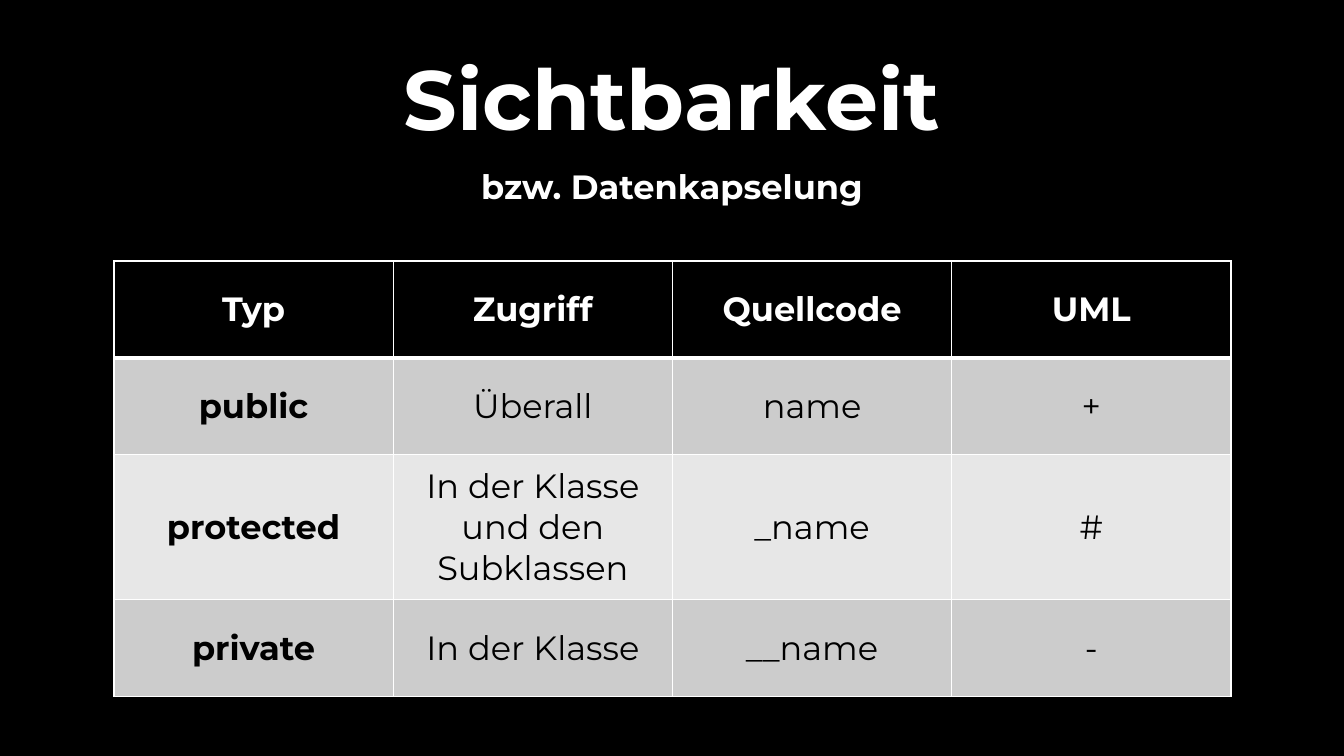
from dataclasses import dataclass

from lxml.etree import SubElement
from pptx import Presentation
from pptx.dml.color import RGBColor
from pptx.enum.text import MSO_ANCHOR, MSO_AUTO_SIZE, PP_ALIGN
from pptx.oxml.ns import qn
from pptx.util import Inches, Pt

FONT = "Montserrat"
BLACK, WHITE = "000000", "FFFFFF"
DARK_BAND, LIGHT_BAND = "CCCCCC", "E7E7E7"


@dataclass
class Row:
    cells: tuple[str, str, str, str]
    height: float
    fill: str
    color: str = BLACK
    header: bool = False
    top: float = 1
    bottom: float = 1


@dataclass
class Heading:
    text: str
    top: float
    height: float
    size: float


TITLE = Heading("Sichtbarkeit", 0.31, 1.42, 60)
SUBTITLE = Heading("bzw. Datenkapselung", 1.57, 0.61, 24)
ROWS = [
    Row(("Typ", "Zugriff", "Quellcode", "UML"), 0.96, BLACK, WHITE, header=True, bottom=3),
    Row(("public", "Überall", "name", "+"), 0.96, DARK_BAND, top=3),
    Row(("protected", "In der Klasse und den Subklassen", "_name", "#"), 1.44, LIGHT_BAND),
    Row(("private", "In der Klasse", "__name", "-"), 0.96, DARK_BAND),
]
COLUMN_WIDTH = 2.77


def rgb(color: str) -> RGBColor:
    return RGBColor.from_string(color)


def format_text(tf, size: float, color: str, bold: bool) -> None:
    p = tf.paragraphs[0]
    p.alignment = PP_ALIGN.CENTER
    font = p.runs[0].font
    font.name, font.size, font.bold = FONT, Pt(size), bold
    font.color.rgb = rgb(color)


def add_heading(sp, heading: Heading) -> None:
    sp.left, sp.top = Inches(0.15), Inches(heading.top)
    sp.width, sp.height = Inches(13.03), Inches(heading.height)
    tf = sp.text_frame
    tf.text = heading.text
    tf.word_wrap = True
    tf.auto_size = MSO_AUTO_SIZE.NONE
    tf.vertical_anchor = MSO_ANCHOR.MIDDLE
    tf.paragraphs[0].line_spacing = 0.9
    format_text(tf, heading.size, WHITE, True)


def add_border(cell, side: str, width: float) -> None:
    ln = SubElement(cell._tc.get_or_add_tcPr(), qn(f"a:ln{side}"), w=str(Pt(width)))
    fill = SubElement(ln, qn("a:solidFill"))
    SubElement(fill, qn("a:srgbClr"), val=WHITE)


def format_cell(cell, text: str, row: Row, bold: bool) -> None:
    cell.text_frame.text = text
    cell.vertical_anchor = MSO_ANCHOR.MIDDLE
    format_text(cell.text_frame, 24, row.color, bold)
    # Borders precede the fill in the cell properties
    for side, width in (("L", 1), ("R", 1), ("T", row.top), ("B", row.bottom)):
        add_border(cell, side, width)
    cell.fill.solid()
    cell.fill.fore_color.rgb = rgb(row.fill)


def add_visibility_table(slide) -> None:
    columns = len(ROWS[0].cells)
    height = sum(row.height for row in ROWS)
    table = slide.shapes.add_table(
        len(ROWS), columns, Inches(1.13), Inches(2.59),
        Inches(COLUMN_WIDTH * columns), Inches(height)).table
    for column in table.columns:
        column.width = Inches(COLUMN_WIDTH)
    for i, row in enumerate(ROWS):
        table.rows[i].height = Inches(row.height)
        for j, text in enumerate(row.cells):
            format_cell(table.cell(i, j), text, row, row.header or j == 0)


def main() -> None:
    prs = Presentation()
    prs.slide_width, prs.slide_height = Inches(13.33), Inches(7.5)
    slide = prs.slides.add_slide(prs.slide_layouts[5])
    slide.background.fill.solid()
    slide.background.fill.fore_color.rgb = rgb(BLACK)

    # Headings
    add_heading(slide.shapes.title, TITLE)
    add_heading(slide.shapes.add_textbox(0, 0, 0, 0), SUBTITLE)

    # Table of access levels
    add_visibility_table(slide)
    prs.save("out.pptx")


if __name__ == "__main__":
    main()
